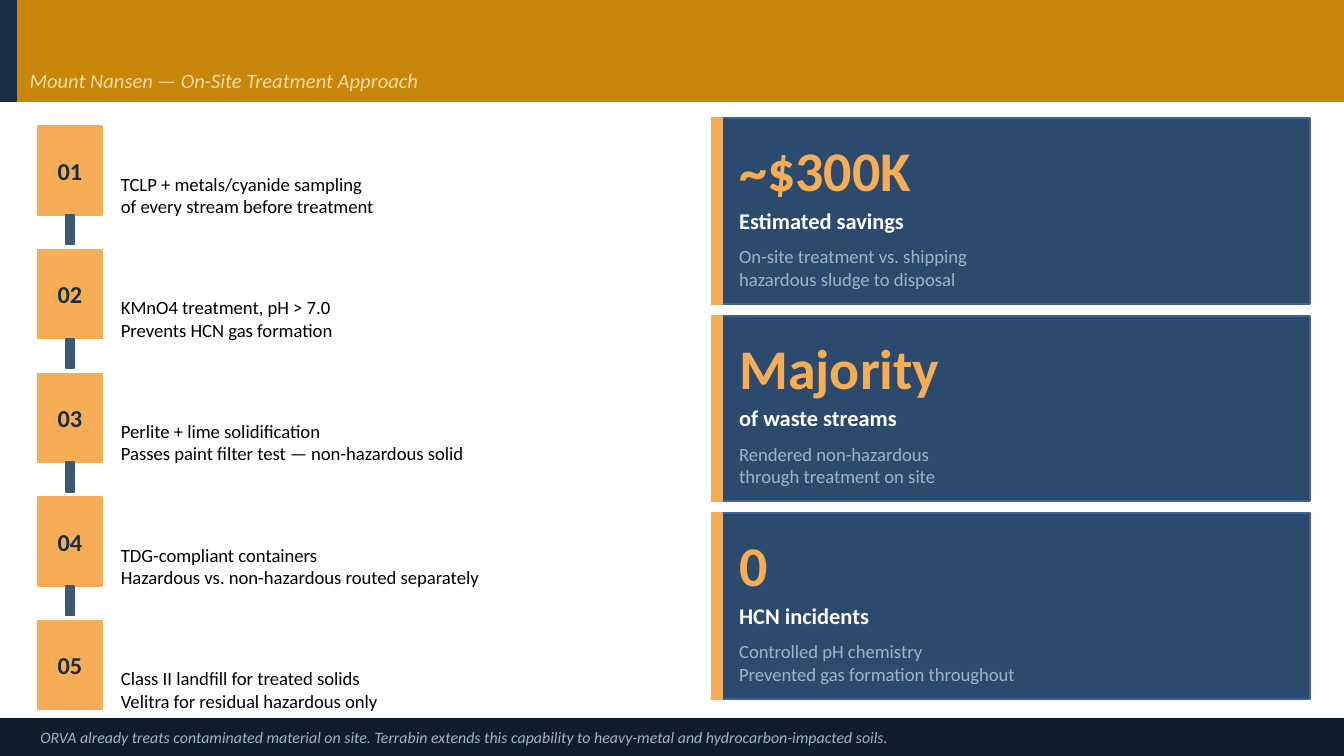
from dataclasses import dataclass

from pptx import Presentation
from pptx.dml.color import RGBColor
from pptx.enum.shapes import MSO_SHAPE as Shape
from pptx.enum.text import MSO_ANCHOR as Anchor, PP_ALIGN as Align
from pptx.util import Pt


@dataclass(frozen=True)
class Theme:
    """Colours, type sizes and font of the slide."""
    font: str = "Calibri"
    gold: str = "C8860A"
    cream: str = "F5DBA0"
    navy: str = "1A2E44"
    midnight: str = "0F1E2E"
    amber: str = "F6AD55"
    slate: str = "3D5A73"
    card: str = "2C4A6E"
    card_edge: str = "3D6494"
    mist: str = "A0B4C8"
    white: str = "FFFFFF"
    black: str = "000000"
    figure_size: float = 30
    number_size: float = 13
    label_size: float = 12
    heading_size: float = 11
    body_size: float = 10
    footer_size: float = 8.5


THEME = Theme()

STEPS = [
    ["TCLP + metals/cyanide sampling", "of every stream before treatment"],
    ["KMnO4 treatment, pH > 7.0", "Prevents HCN gas formation"],
    ["Perlite + lime solidification", "Passes paint filter test — non-hazardous solid"],
    ["TDG-compliant containers", "Hazardous vs. non-hazardous routed separately"],
    ["Class II landfill for treated solids", "Velitra for residual hazardous only"],
]
STEP_TOP, STEP_PITCH = 67.68, 66.24
STEP_LEFT, STEP_WIDTH, STEP_HEIGHT = 20.16, 34.56, 47.52
LINK_WIDTH, LINK_HEIGHT = 4.32, 15.84

CARDS = [
    ("~$300K", "Estimated savings",
     ["On-site treatment vs. shipping", "hazardous sludge to disposal"]),
    ("Majority", "of waste streams",
     ["Rendered non-hazardous", "through treatment on site"]),
    ("0", "HCN incidents",
     ["Controlled pH chemistry", "Prevented gas formation throughout"]),
]
CARD_TOP, CARD_PITCH = 63.36, 105.84
CARD_LEFT, CARD_WIDTH, CARD_HEIGHT = 381.6, 320.4, 99.36
CARD_TEXT_LEFT, TEXT_WIDTH = 396, 295.2


def write(box, lines, size, color, bold=False, italic=False,
          align=Align.LEFT, anchor=Anchor.MIDDLE, bottom=0):
    """Fill a shape with one paragraph per line, all in the same style."""
    frame = box.text_frame
    frame.word_wrap = True
    frame.vertical_anchor = anchor
    frame.margin_left = frame.margin_top = frame.margin_right = 0
    frame.margin_bottom = Pt(bottom)
    frame.text = "\n".join(lines)
    for para in frame.paragraphs:
        para.alignment = align
        font = para.font
        font.name, font.size = THEME.font, Pt(size)
        font.bold, font.italic = bold, italic
        font.color.rgb = RGBColor.from_string(color)


def add_text(page, left, top, width, height, lines, size, color, **style):
    """Add a text box without side margins."""
    box = page.shapes.add_textbox(Pt(left), Pt(top), Pt(width), Pt(height))
    write(box, lines, size, color, **style)


def add_block(page, left, top, width, height, fill, edge=None):
    """Add a flat rectangle with a one-point outline."""
    block = page.shapes.add_shape(
        Shape.RECTANGLE, Pt(left), Pt(top), Pt(width), Pt(height))
    block.shadow.inherit = False
    block.fill.solid()
    block.fill.fore_color.rgb = RGBColor.from_string(fill)
    block.line.color.rgb = RGBColor.from_string(edge or fill)
    block.line.width = Pt(1)
    return block


def add_header(page):
    """Add the gold band with its heading."""
    add_block(page, 0, 0, 720, 54, THEME.gold)
    add_block(page, 0, 0, 8.64, 54, THEME.navy)
    add_text(page, 15.84, 0, 691.2, 54,
             ["Mount Nansen — On-Site Treatment Approach"],
             THEME.heading_size, THEME.cream,
             italic=True, anchor=Anchor.BOTTOM, bottom=4.32)


def add_step(page, index, lines):
    """Add a numbered step, linked to the next one if there is one."""
    top = STEP_TOP + index * STEP_PITCH
    block = add_block(page, STEP_LEFT, top, STEP_WIDTH, STEP_HEIGHT, THEME.amber)
    write(block, [f"{index + 1:02d}"], THEME.number_size, THEME.navy,
          bold=True, align=Align.CENTER)
    if index < len(STEPS) - 1:
        link_left = STEP_LEFT + (STEP_WIDTH - LINK_WIDTH) / 2
        add_block(page, link_left, top + STEP_HEIGHT, LINK_WIDTH, LINK_HEIGHT,
                  THEME.slate)
    add_text(page, 64.8, top + 21.6, TEXT_WIDTH, 30.24, lines,
             THEME.body_size, THEME.black)


def add_card(page, index, figure, label, lines):
    """Add a result card with its figure, label and explanation."""
    top = CARD_TOP + index * CARD_PITCH
    add_block(page, CARD_LEFT, top, CARD_WIDTH, CARD_HEIGHT,
              THEME.card, THEME.card_edge)
    add_block(page, CARD_LEFT, top, 5.04, CARD_HEIGHT, THEME.amber)
    add_text(page, CARD_TEXT_LEFT, top + 7.2, TEXT_WIDTH, 40.32, [figure],
             THEME.figure_size, THEME.amber, bold=True)
    add_text(page, CARD_TEXT_LEFT, top + 44.64, TEXT_WIDTH, 20.16, [label],
             THEME.label_size, THEME.white, bold=True)
    add_text(page, CARD_TEXT_LEFT, top + 64.8, TEXT_WIDTH, 30.24, lines,
             THEME.body_size, THEME.mist)


def add_footer(page):
    """Add the dark band with the closing remark."""
    add_block(page, 0, 385.2, 720, 20.16, THEME.midnight)
    add_text(page, 21.6, 385.92, 676.8, 18,
             ["ORVA already treats contaminated material on site. Terrabin extends "
              "this capability to heavy-metal and hydrocarbon-impacted soils."],
             THEME.footer_size, THEME.mist, italic=True)


def main():
    """Build the slide and save it."""
    deck = Presentation()
    deck.slide_width, deck.slide_height = Pt(720), Pt(405)
    page = deck.slides.add_slide(deck.slide_layouts[6])
    add_header(page)
    for index, lines in enumerate(STEPS):
        add_step(page, index, lines)
    for index, (figure, label, lines) in enumerate(CARDS):
        add_card(page, index, figure, label, lines)
    add_footer(page)
    deck.save("out.pptx")


if __name__ == "__main__":
    main()
